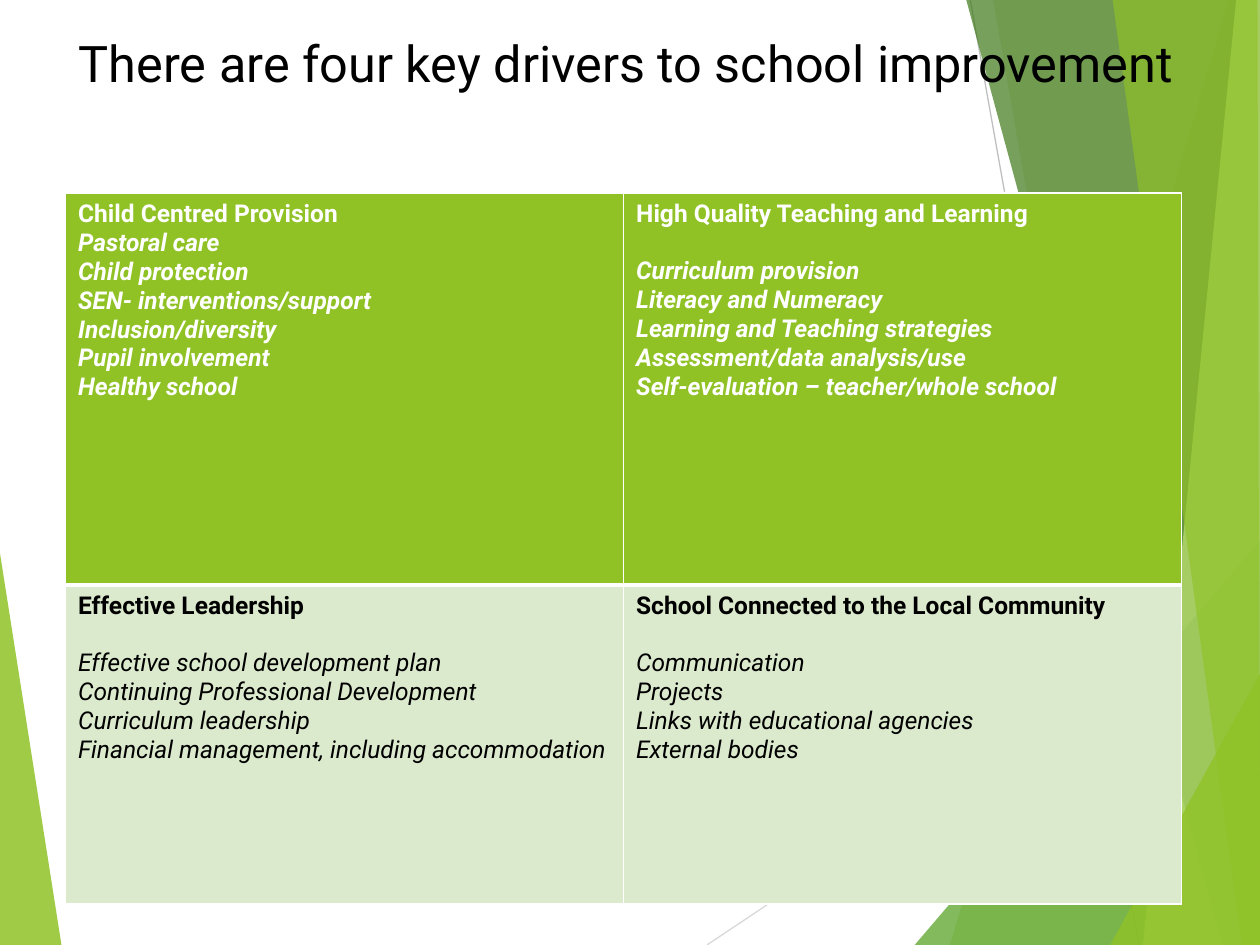
import pptx
import pptx.dml.color
import pptx.enum.shapes
import pptx.enum.text
import pptx.oxml
import pptx.oxml.ns
import pptx.util
from lxml import etree

Cm = pptx.util.Cm
Pt = pptx.util.Pt
WIDTH, HEIGHT = 25.4, 19.05
GREEN, PALE, WHITE, BLACK = "90C226", "DBE9CD", "FFFFFF", "000000"

SHARDS_BEHIND = [
    (GREEN, 85, [(0, 11.15), (1.24, HEIGHT), (0, HEIGHT)]),
]
RAYS = [
    ("D9D9D9", (14.25, HEIGHT), (WIDTH, 11.61)),
    ("BFBFBF", (19.56, 0), (22.96, HEIGHT)),
]
SHARDS_FRONT = [
    (GREEN, 30, [(24.77, 0), (19.15, HEIGHT), (WIDTH, HEIGHT), (WIDTH, 0)]),
    (GREEN, 20, [(20.02, 0), (23.34, HEIGHT), (WIDTH, HEIGHT), (WIDTH, 0)]),
    ("54A021", 72, [(18.44, HEIGHT), (WIDTH, 10.9), (WIDTH, HEIGHT)]),
    ("3F7819", 70, [(19.48, 0), (24.64, HEIGHT), (WIDTH, HEIGHT), (WIDTH, 0)]),
    ("C0E474", 70, [(24.92, 0), (23.04, HEIGHT), (WIDTH, HEIGHT), (WIDTH, 0)]),
    (GREEN, 65, [(22.43, 0), (25.04, HEIGHT), (WIDTH, HEIGHT), (25.35, 0)]),
    (GREEN, 80, [(22.38, HEIGHT), (WIDTH, 13.59), (WIDTH, HEIGHT)]),
]

DRIVERS = [
    [
        ("Child Centred Provision", 0, [
            "Pastoral care", "Child protection", "SEN- interventions/support",
            "Inclusion/diversity", "Pupil involvement", "Healthy school"]),
        ("High Quality Teaching and Learning", 16.5, [
            "Curriculum provision", "Literacy and Numeracy",
            "Learning and Teaching strategies", "Assessment/data analysis/use",
            "Self-evaluation – teacher/whole school"]),
    ],
    [
        ("Effective Leadership", 16.5, [
            "Effective school development plan",
            "Continuing Professional Development", "Curriculum leadership",
            "Financial management, including accommodation"]),
        ("School Connected to the Local Community", 16.5, [
            "Communication", "Projects", "Links with educational agencies",
            "External bodies"]),
    ],
]
ROW_STYLES = [
    {"fill": GREEN, "color": WHITE, "bold": True, "bottom": 3},
    {"fill": PALE, "color": BLACK, "bold": False, "bottom": 1},
]


def rgb(value):
    return pptx.dml.color.RGBColor.from_string(value)


def assign(target, values):
    for name, value in values.items():
        setattr(target, name, value)


class SlideBuilder:
    font = "Roboto"

    def __init__(self, slide):
        self.slide = slide

    def add_span(self, para, text, color, **values):
        span = para.add_run()
        span.text = text
        assign(span.font, {"name": self.font, **values})
        span.font.color.rgb = rgb(color)

    def shard(self, color, opacity, points):
        corners = [(Cm(x), Cm(y)) for x, y in points]
        builder = self.slide.shapes.build_freeform(*corners[0])
        builder.add_line_segments(corners[1:], close=True)
        shape = builder.convert_to_shape()
        shape.shadow.inherit = False
        shape.line.fill.background()
        shape.fill.solid()
        shape.fill.fore_color.rgb = rgb(color)
        tint = shape.element.find(".//" + pptx.oxml.ns.qn("a:srgbClr"))
        alpha = etree.SubElement(tint, pptx.oxml.ns.qn("a:alpha"))
        alpha.set("val", str(opacity * 1000))

    def ray(self, color, start, end):
        line = self.slide.shapes.add_connector(
            pptx.enum.shapes.MSO_CONNECTOR.STRAIGHT,
            *map(Cm, start + end))
        line.line.color.rgb = rgb(color)
        line.line.width = Pt(0.75)
        etree.SubElement(line.element.spPr, pptx.oxml.ns.qn("a:effectLst"))

    def title(self, text):
        box = self.slide.shapes.title
        assign(box, {"left": Cm(1.32), "top": Cm(0.53),
                     "width": Cm(22.86), "height": Cm(2.39)})
        assign(box.text_frame, {
            "word_wrap": True,
            "auto_size": pptx.enum.text.MSO_AUTO_SIZE.NONE,
            "vertical_anchor": pptx.enum.text.MSO_ANCHOR.TOP})
        para = box.text_frame.paragraphs[0]
        para.alignment = pptx.enum.text.PP_ALIGN.CENTER
        self.add_span(para, text, BLACK, size=Pt(28.8))
        self.slide.shapes.element.append(box.element)

    def borders(self, cell, bottom):
        properties = cell._tc.get_or_add_tcPr()
        for side, width in zip("LRTB", (1, 1, 1, bottom)):
            properties.append(pptx.oxml.parse_xml(
                f'<a:ln{side} {pptx.oxml.ns.nsdecls("a")} w="{Pt(width)}">'
                f'<a:solidFill><a:srgbClr val="{WHITE}"/></a:solidFill>'
                f'</a:ln{side}>'))

    def driver(self, cell, style, heading, gap, topics):
        self.borders(cell, style["bottom"])
        cell.fill.solid()
        cell.fill.fore_color.rgb = rgb(style["fill"])
        frame = cell.text_frame
        self.add_span(frame.paragraphs[0], heading, style["color"],
                      size=Pt(14), bold=True, italic=False)
        for index, topic in enumerate(topics):
            para = frame.add_paragraph()
            para.space_before = Pt(0 if index else gap)
            self.add_span(para, topic, style["color"],
                          size=Pt(14), bold=style["bold"], italic=True)

    def table(self, rows, styles):
        grid = self.slide.shapes.add_table(
            2, 2, Cm(1.32), Cm(3.89), Cm(22.5), Cm(14.33)).table
        for row, height in zip(grid.rows, (7.9, 6.43)):
            row.height = Cm(height)
        for row, drivers, style in zip(grid.rows, rows, styles):
            for cell, content in zip(row.cells, drivers):
                self.driver(cell, style, *content)


def main():
    deck = pptx.Presentation()
    assign(deck, {"slide_width": Cm(WIDTH), "slide_height": Cm(HEIGHT)})
    page = SlideBuilder(deck.slides.add_slide(deck.slide_layouts[5]))
    for shard in SHARDS_BEHIND:
        page.shard(*shard)
    for ray in RAYS:
        page.ray(*ray)
    for shard in SHARDS_FRONT:
        page.shard(*shard)
    page.title("There are four key drivers to school improvement ")
    page.table(DRIVERS, ROW_STYLES)
    deck.save("out.pptx")


if __name__ == "__main__":
    main()
